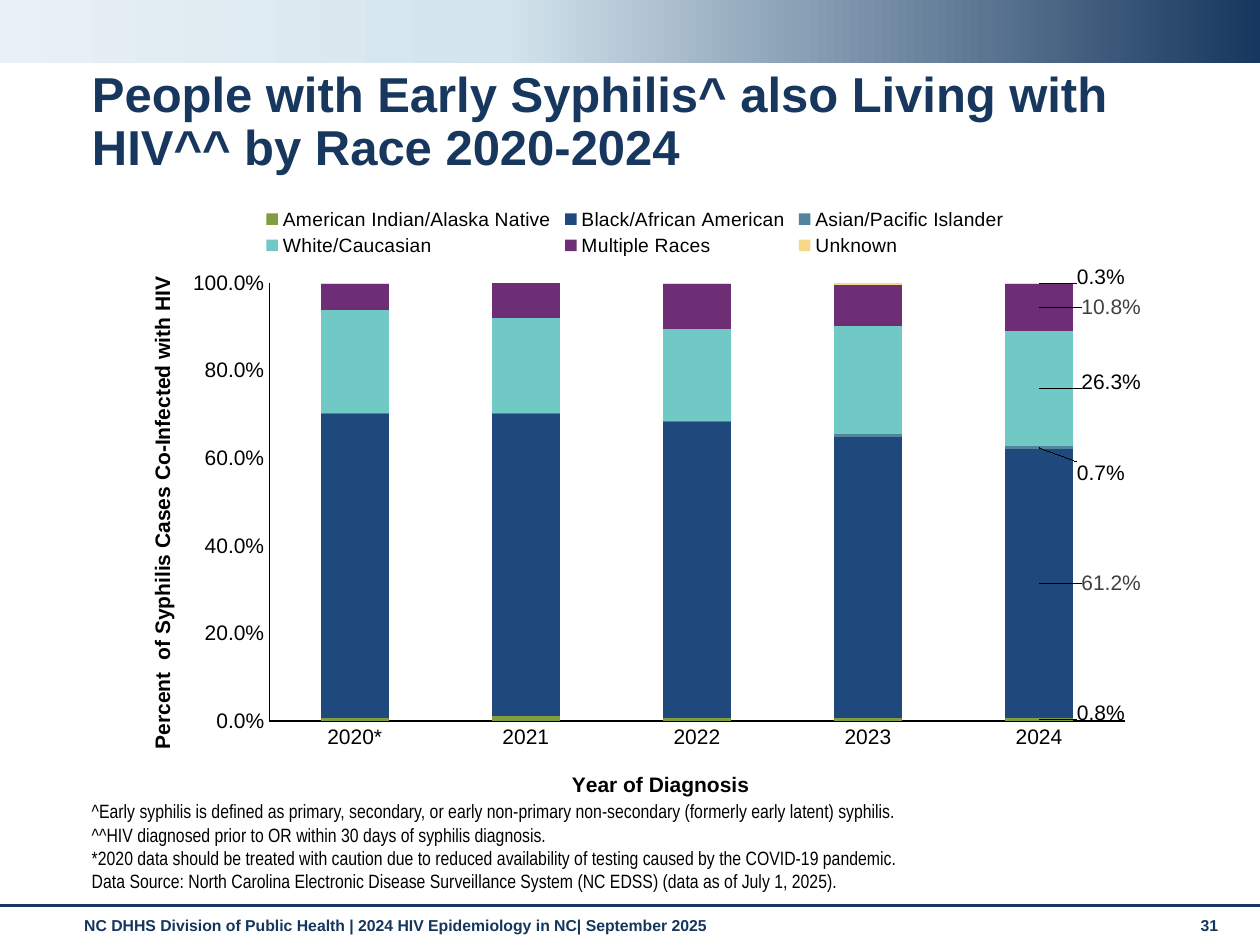
from copy import deepcopy
from typing import NamedTuple

from lxml.etree import SubElement
from pptx import Presentation
from pptx.chart.data import CategoryChartData
from pptx.dml.color import RGBColor
from pptx.enum.chart import XL_CHART_TYPE as ChartType, XL_LEGEND_POSITION as LegendPos
from pptx.enum.chart import XL_TICK_MARK as TickMark
from pptx.enum.shapes import MSO_CONNECTOR as Connector, MSO_SHAPE as Shape
from pptx.enum.text import MSO_ANCHOR as Anchor, MSO_AUTO_SIZE as AutoSize
from pptx.oxml import parse_xml
from pptx.oxml.ns import nsdecls, qn
from pptx.util import Inches, Pt

NAVY, BLACK, GRAY = "17375E", "000000", "404040"


class Race(NamedTuple):
    name: str
    shares: tuple
    color: str
    label_color: str
    label_shift: tuple  # fraction of the chart, from the segment centre


class Note(NamedTuple):
    lines: tuple
    box: tuple
    size: float
    font: str
    color: str
    bold: bool
    anchor: Anchor


YEARS = ("2020*", "2021", "2022", "2023", "2024")
RACES = (
    Race("American Indian/Alaska Native", (0.007, 0.011, 0.006, 0.007, 0.008),
         "7F9E3F", BLACK, (0.06, -0.01)),
    Race("Black/African American", (0.694, 0.689, 0.676, 0.642, 0.612),
         "1F497D", GRAY, (0.07, 0)),
    Race("Asian/Pacific Islander", (0.003, 0.004, 0.002, 0.007, 0.007),
         "52849C", BLACK, (0.06, 0.04)),
    Race("White/Caucasian", (0.235, 0.216, 0.211, 0.246, 0.263),
         "71C9C5", BLACK, (0.07, -0.01)),
    Race("Multiple Races", (0.059, 0.081, 0.103, 0.092, 0.108),
         "6D2E75", GRAY, (0.07, 0)),
    Race("Unknown", (0.003, 0, 0.003, 0.006, 0.003),
         "F6D888", BLACK, (0.06, -0.01)),
)
NOTES = (
    Note(("^Early syphilis is defined as primary, secondary, or early non-primary "
          "non-secondary (formerly early latent) syphilis.",
          "^^HIV diagnosed prior to OR within 30 days of syphilis diagnosis.",
          "*2020 data should be treated with caution due to reduced availability "
          "of testing caused by the COVID-19 pandemic.",
          "Data Source: North Carolina Electronic Disease Surveillance System "
          "(NC EDSS) (data as of July 1, 2025)."),
         (0.63, 6.5, 8.74, 0.63), 11, "Arial Narrow", BLACK, False, Anchor.BOTTOM),
    Note(("NC DHHS Division of Public Health | 2024 HIV Epidemiology in NC| "
          "September 2025",),
         (0.57, 7.22, 8.74, 0.29), 9, "Arial", "15365E", True, Anchor.TOP),
    Note(("31",), (9.43, 7.22, 0.44, 0.3), 9, "Arial", "15365E", True, Anchor.TOP),
)


def rgb(color: str) -> RGBColor:
    return RGBColor.from_string(color)


def style(font, size: float, color: str, bold: bool = False, name: str = "Arial") -> None:
    font.size, font.bold, font.name = Pt(size), bold, name
    font.color.rgb = rgb(color)


def draw_note(slide, note: Note) -> None:
    frame = slide.shapes.add_textbox(*map(Inches, note.box)).text_frame
    frame.word_wrap, frame.vertical_anchor = True, note.anchor
    for i, line in enumerate(note.lines):
        paragraph = frame.paragraphs[0] if i == 0 else frame.add_paragraph()
        run = paragraph.add_run()
        run.text = line
        style(run.font, note.size, note.color, note.bold, note.font)


def draw_band(slide) -> None:
    band = slide.shapes.add_shape(Shape.RECTANGLE, 0, 0, Inches(10), Inches(0.5))
    band.shadow.inherit = False
    band.line.fill.background()
    band.fill.gradient()
    band.fill.gradient_angle = 0
    last = band._element.spPr.findall(".//" + qn("a:gs"))[-1]
    last.addprevious(deepcopy(last))
    stops = ((0, "E9F1F6"), (0.4, "D3E4ED"), (1, NAVY))
    for stop, (position, color) in zip(band.fill.gradient_stops, stops):
        stop.position, stop.color.rgb = position, rgb(color)


def draw_rule(slide) -> None:
    rule = slide.shapes.add_connector(
        Connector.STRAIGHT, 0, Inches(7.19), Inches(10), Inches(7.19))
    rule.line.color.rgb, rule.line.width = rgb(NAVY), Pt(1.75)
    SubElement(rule._element.spPr, qn("a:effectLst"))


def place(element, index: int, edge: bool = True, **box: float) -> None:
    """Give a chart part a manual layout in fractions of the chart."""
    old = element.find(qn("c:layout"))
    if old is not None:
        element.remove(old)
    modes = '<c:xMode val="edge"/><c:yMode val="edge"/>' if edge else ""
    sides = "".join(f'<c:{side} val="{value}"/>' for side, value in box.items())
    target = '<c:layoutTarget val="inner"/>' if element.tag == qn("c:plotArea") else ""
    element.insert(index, parse_xml(
        f'<c:layout {nsdecls("c")}><c:manualLayout>{target}{modes}{sides}'
        "</c:manualLayout></c:layout>"))


def format_axis(axis, title: str, x: float, y: float) -> None:
    run = axis.axis_title.text_frame.paragraphs[0].add_run()
    run.text = title
    style(run.font, 12, BLACK, True)
    place(axis.axis_title._element, 1, x=x, y=y)
    style(axis.tick_labels.font, 12, BLACK)
    axis.major_tick_mark = axis.minor_tick_mark = TickMark.NONE
    axis.has_major_gridlines = False
    axis.format.line.color.rgb, axis.format.line.width = rgb(BLACK), Pt(0.75)


def draw_chart(slide) -> None:
    data = CategoryChartData(number_format="0.0%")
    data.categories = YEARS
    for race in RACES:
        data.add_series(race.name, race.shares)
    chart = slide.shapes.add_chart(
        ChartType.COLUMN_STACKED, *map(Inches, (0.91, 1.52, 8.18, 4.97)), data).chart
    style(chart.font, 10, BLACK)
    chart.has_title = False
    plot = chart.plots[0]
    plot.gap_width, plot.overlap, plot.vary_by_categories = 150, 100, False
    place(plot._element.getparent(), 0, x=0.15, y=0.146, w=0.83, h=0.7)

    # Axes and legend
    format_axis(chart.category_axis, "Year of Diagnosis", 0.44, 0.92)
    shares = chart.value_axis
    format_axis(shares, "Percent  of Syphilis Cases Co-Infected with HIV", 0.03, 0.13)
    shares.minimum_scale, shares.maximum_scale, shares.major_unit = 0, 1, 0.2
    shares.tick_labels.number_format = "0.0%"
    shares.tick_labels.number_format_is_linked = False
    chart.has_legend = True
    chart.legend.position, chart.legend.include_in_layout = LegendPos.TOP, False
    style(chart.legend.font, 11, BLACK)
    place(chart.legend._element, 1, x=0.14, y=0.02, w=0.73, h=0.09)

    # Segment colours, with values beside the last column only
    for series, race in zip(plot.series, RACES):
        series.format.fill.solid()
        series.format.fill.fore_color.rgb = rgb(race.color)
        series.data_labels.show_value = False
        label = series.points[len(YEARS) - 1].data_label
        style(label.font, 12, race.label_color)
        dx, dy = race.label_shift
        place(label._get_or_add_dLbl(), 1, edge=False, x=dx, y=dy)


def draw_title(slide) -> None:
    title = slide.shapes.title
    title.left, title.top, title.width, title.height = map(
        Inches, (0.63, 0.51, 9.24, 0.6))
    frame = title.text_frame
    frame.vertical_anchor, frame.auto_size = Anchor.TOP, AutoSize.NONE
    frame.word_wrap = True
    heading = frame.paragraphs[0]
    heading.alignment, heading.line_spacing = 1, 0.9
    run = heading.add_run()
    run.text = "People with Early Syphilis^ also Living with HIV^^ by Race 2020-2024"
    style(run.font, 28, NAVY, True)


def main() -> None:
    deck = Presentation()
    deck.slide_width, deck.slide_height = Inches(10), Inches(7.5)
    slide = deck.slides.add_slide(deck.slide_layouts[5])
    draw_band(slide)
    draw_rule(slide)
    draw_title(slide)
    for note in NOTES:
        draw_note(slide, note)
    draw_chart(slide)
    deck.save("out.pptx")


if __name__ == "__main__":
    main()
